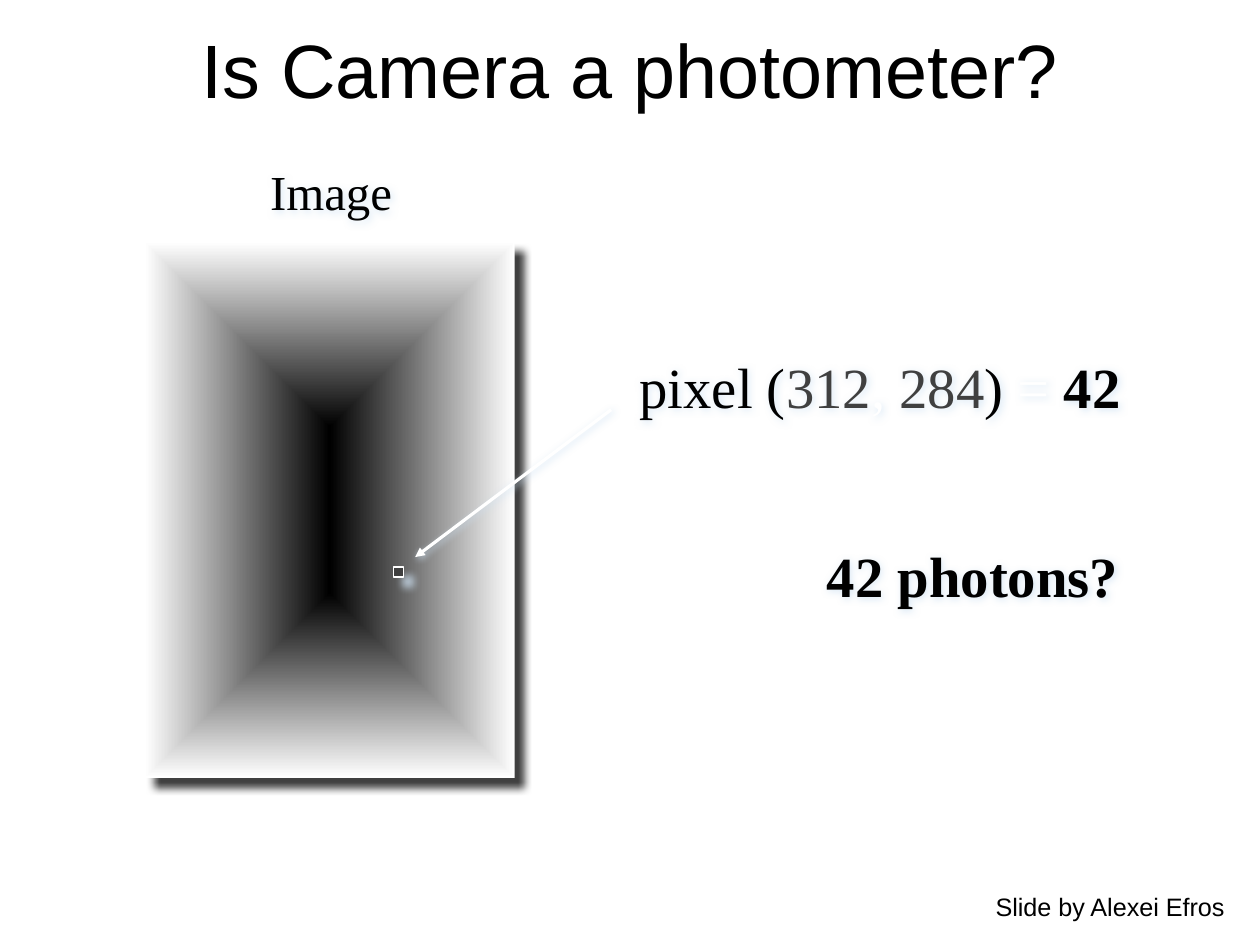
"""Builds a slide that asks whether a camera measures light."""
from dataclasses import dataclass
from lxml.etree import SubElement as Sub
from pptx import Presentation
from pptx.dml.color import RGBColor as Rgb
from pptx.enum.shapes import MSO_CONNECTOR as Link, MSO_SHAPE as Form
from pptx.enum.text import MSO_ANCHOR as Anchor, MSO_AUTO_SIZE as Fit, PP_ALIGN as Align
from pptx.oxml.ns import qn
from pptx.util import Inches, Pt


@dataclass(frozen=True)
class Theme:
    black: str = "000000"
    white: str = "FFFFFF"
    gray: str = "404040"
    dark: str = "3F3F3F"
    glow: str = "CFE2F3"
    sans: str = "Arial"
    serif: str = "Times New Roman"
    title: int = 48
    large: int = 36
    label: int = 31
    small: int = 16


LOOK = Theme()
WIDE, HIGH = Inches(11.11), Inches(8.33)


def grid(*shares):
    """Turn alternating percentages of width and height into lengths."""
    return [round(share * (HIGH if i % 2 else WIDE) / 100) for i, share in enumerate(shares)]


def cast(shape, color, gap):
    """Add a soft diagonal shadow once fill and line are set."""
    effects = Sub(shape._element.spPr, qn("a:effectLst"))
    outer = Sub(effects, qn("a:outerShdw"), blurRad=str(Pt(5)), dist=str(Pt(gap)),
                dir=str(45 * 60000), algn="ctr", rotWithShape="0")
    tint = Sub(outer, qn("a:srgbClr"), val=color)
    Sub(tint, qn("a:alpha"), val="75000")


def style(font, face, size, bold=False):
    """Set face, size, weight and the usual text colour."""
    font.name, font.size, font.bold = face, Pt(size), bold
    font.color.rgb = Rgb.from_string(LOOK.black)


def blend(fill):
    """Fill from a black centre to white edges."""
    fill.gradient()
    for stop, color, place in zip(fill.gradient_stops, (LOOK.black, LOOK.white), (0, 1)):
        stop.color.rgb, stop.position = Rgb.from_string(color), place
    grad = fill._xPr.find(qn("a:gradFill"))
    grad.remove(grad.find(qn("a:lin")))
    route = Sub(grad, qn("a:path"), path="shape")
    Sub(route, qn("a:fillToRect"), l="50000", t="50000", r="50000", b="50000")


def photo(slide, *spot):
    """Draw the shaded image."""
    box = slide.shapes.add_shape(Form.RECTANGLE, *grid(*spot))
    blend(box.fill)
    box.line.fill.background()
    cast(box, LOOK.black, 8.5)


def pixel(slide, *spot):
    """Draw one outlined pixel."""
    box = slide.shapes.add_shape(Form.RECTANGLE, *grid(*spot))
    box.fill.solid()
    box.fill.fore_color.rgb = Rgb.from_string(LOOK.dark)
    box.line.color.rgb = Rgb.from_string(LOOK.white)
    box.line.width = Pt(1)
    cast(box, LOOK.glow, 8.5)


def arrow(slide, *ends):
    """Draw an arrow between two points."""
    line = slide.shapes.add_connector(Link.STRAIGHT, *grid(*ends))
    line.line.color.rgb = Rgb.from_string(LOOK.white)
    line.line.width = Pt(2)
    Sub(line.line._ln, qn("a:tailEnd"), type="triangle")
    cast(line, LOOK.glow, 1.4)


def label(slide, spot, parts, face, size, bold=False, wrap=False, glow=True):
    """Write one line from pairs of text and colour."""
    box = slide.shapes.add_textbox(*grid(*spot))
    frame = box.text_frame
    frame.word_wrap, frame.auto_size = wrap, Fit.SHAPE_TO_FIT_TEXT
    para = frame.paragraphs[0]
    para.alignment = Align.CENTER if wrap else Align.LEFT
    style(para.font, face, size, bold)
    for text, color in parts:
        run = para.add_run()
        run.text = text
        run.font.color.rgb = Rgb.from_string(color)
    if glow:
        frame.margin_left = frame.margin_right = Inches(0.11)
        cast(box, LOOK.glow, 1.4)
    return para


def head(slide, text, *spot):
    """Place and format the title."""
    title = slide.shapes.title
    title.left, title.top, title.width, title.height = grid(*spot)
    frame = title.text_frame
    frame.text, frame.vertical_anchor = text, Anchor.MIDDLE
    frame.margin_left = frame.margin_right = Inches(0.11)
    frame.margin_top = frame.margin_bottom = Inches(0.06)
    para = frame.paragraphs[0]
    para.alignment = Align.CENTER
    style(para.font, LOOK.sans, LOOK.title)


def main():
    """Build and save the slide."""
    deck = Presentation()
    deck.slide_width, deck.slide_height = WIDE, HIGH
    slide = deck.slides.add_slide(deck.slide_layouts[5])
    black, gray, white = LOOK.black, LOOK.gray, LOOK.white
    head(slide, "Is Camera a photometer?", 7.5, 1.1, 85, 12.2)
    photo(slide, 11.5, 25.6, 29.35, 56.7)
    pixel(slide, 31.23, 60, 0.81, 1.08)
    arrow(slide, 48.5, 43.35, 32.95, 58.95)
    value = label(slide, (49.77, 36.6, 40.5, 8.5),
                  [("pixel (", black), ("312", gray), (", ", white), ("284", gray),
                   (") ", black), ("= ", white), ("42", black)], LOOK.serif, LOOK.large)
    value.runs[-1].font.bold = True
    label(slide, (11.43, 16.57, 29.7, 7.56), [("Image", black)],
          LOOK.serif, LOOK.label, wrap=True)
    label(slide, (64.63, 56.66, 25.4, 8.5), [("42 photons?", black)],
          LOOK.serif, LOOK.large, bold=True)
    label(slide, (78.13, 93.76, 20.34, 4.44), [("Slide by Alexei Efros", black)],
          LOOK.sans, LOOK.small, glow=False)
    deck.save("out.pptx")


if __name__ == "__main__":
    main()
